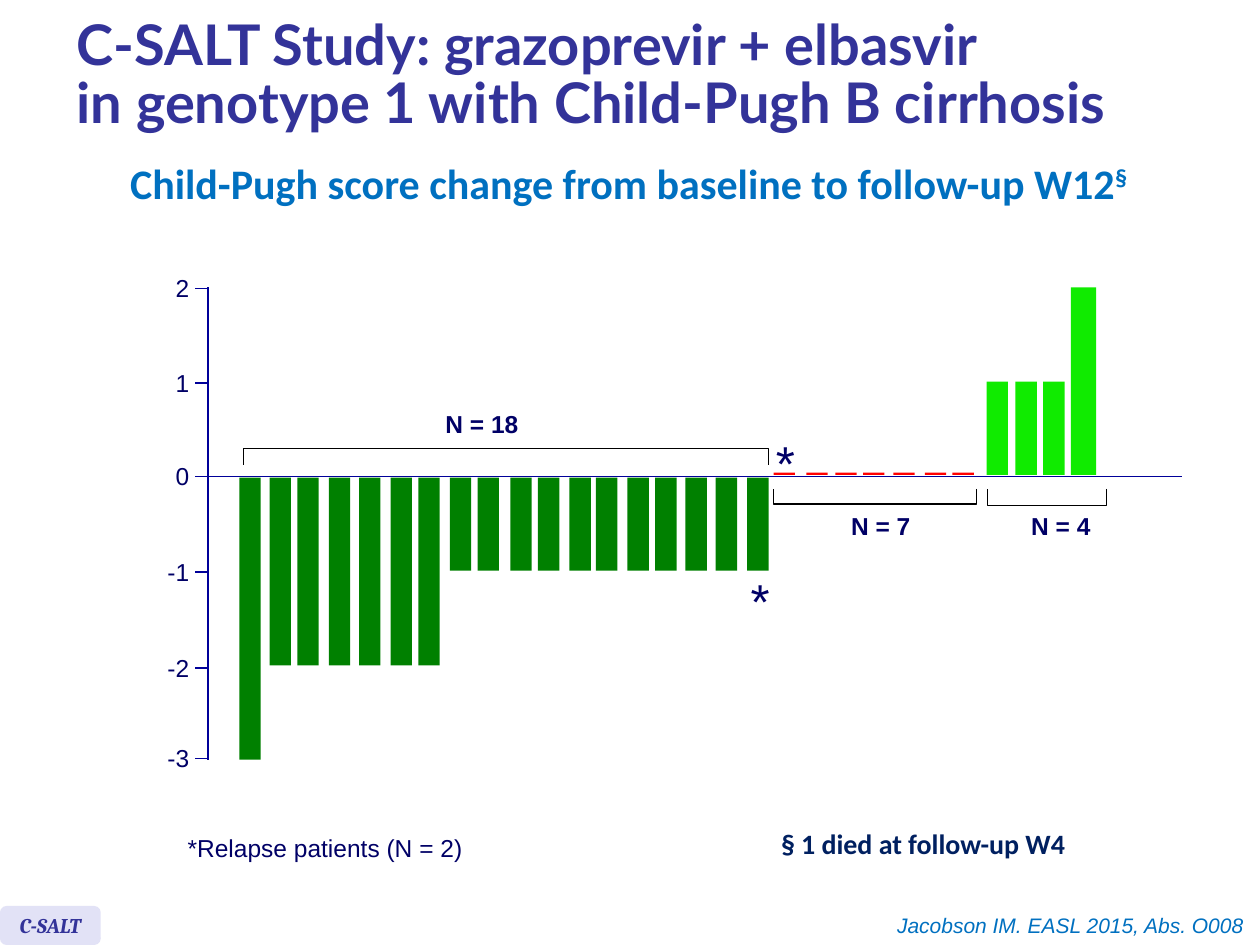
import dataclasses

import pptx
import pptx.dml.color
import pptx.enum.shapes
import pptx.enum.text
import pptx.oxml.ns
import pptx.util
from lxml import etree

SCALE = 9144
INK = {
    "axis": "000099", "label": "000066", "title": "333399", "head": "0070C0",
    "note": "002060", "drop": "008000", "rise": "10EB00", "same": "FF0000",
    "black": "000000", "badge": "E2E2F6",
}
SHAPE = pptx.enum.shapes.MSO_SHAPE
ALIGN = pptx.enum.text.PP_ALIGN
MIDDLE = pptx.enum.text.MSO_ANCHOR.MIDDLE
FIT = pptx.enum.text.MSO_AUTO_SIZE.SHAPE_TO_FIT_TEXT


@dataclasses.dataclass
class Box:
    x: int
    y: int
    w: int
    h: int


@dataclasses.dataclass
class Style:
    size: int
    face: str
    ink: str
    bold: bool = False
    slant: bool = False
    align: ALIGN = ALIGN.LEFT


@dataclasses.dataclass
class Label:
    text: str
    box: Box
    style: Style


@dataclasses.dataclass
class Brace:
    box: Box
    turn: int


@dataclasses.dataclass
class Group:
    lefts: list[int]
    score: int
    ink: str
    width: int = 17


def px(count: float) -> int:
    return round(count * SCALE)


def paint(name: str) -> pptx.dml.color.RGBColor:
    return pptx.dml.color.RGBColor.from_string(INK[name])


def add_run(para, text: str, style: Style):
    run = para.add_run()
    run.text = text
    font = run.font
    font.size = pptx.util.Pt(style.size)
    font.name = style.face
    font.bold = style.bold
    font.italic = style.slant
    font.color.rgb = paint(style.ink)
    return run


def add_text(slide, label: Label):
    box = label.box
    shape = slide.shapes.add_textbox(px(box.x), px(box.y), px(box.w), px(box.h))
    frame = shape.text_frame
    frame.word_wrap = False
    frame.auto_size = FIT
    para = frame.paragraphs[0]
    para.alignment = label.style.align
    add_run(para, label.text, label.style)
    return frame


def add_line(slide, x: int, y: int, end_x: int, end_y: int) -> None:
    line = slide.shapes.add_connector(
        pptx.enum.shapes.MSO_CONNECTOR.STRAIGHT, px(x), px(y), px(end_x), px(end_y))
    line.line.color.rgb = paint("axis")
    line.line.width = pptx.util.Pt(0.88)
    etree.SubElement(line._element.spPr, pptx.oxml.ns.qn("a:effectLst"))


def add_block(slide, kind: SHAPE, box: Box, ink: str):
    shape = slide.shapes.add_shape(kind, px(box.x), px(box.y), px(box.w), px(box.h))
    shape.shadow.inherit = False
    shape.fill.solid()
    shape.fill.fore_color.rgb = paint(ink)
    shape.line.fill.background()
    return shape


def add_brace(slide, brace: Brace) -> None:
    box = brace.box
    left = box.x + (box.w - box.h) / 2
    top = box.y + (box.h - box.w) / 2
    shape = slide.shapes.add_shape(
        SHAPE.LEFT_BRACKET, px(left), px(top), px(box.h), px(box.w))
    shape.shadow.inherit = False
    shape.adjustments[0] = 0
    shape.rotation = brace.turn
    shape.fill.background()
    shape.line.color.rgb = paint("black")
    shape.line.width = pptx.util.Pt(0.75)


def add_group(slide, group: Group) -> None:
    height = round(74.5 * abs(group.score)) or 2
    top = 379 if group.score < 0 else 377 - height
    for left in group.lefts:
        add_block(slide, SHAPE.RECTANGLE, Box(left, top, group.width, height), group.ink)


TICK = Style(14, "Arial", "label", align=ALIGN.RIGHT)
PLAIN = Style(14, "Arial", "label")
STAR = Style(28, "Arial", "label")
COUNT = Style(14, "Arial", "label", bold=True, align=ALIGN.CENTER)
TITLE = Style(32, "Lato", "title", bold=True)
HEAD = Style(24, "Calibri", "head", bold=True, align=ALIGN.CENTER)
NOTE = Style(16, "Calibri", "note", bold=True)
SOURCE = Style(12, "Arial", "head", slant=True, align=ALIGN.RIGHT)
BADGE = Style(12, "Cambria", "title", bold=True, slant=True)

TICKS = {2: 229, 1: 304, 0: 378, -1: 454, -2: 530, -3: 602}
GROUPS = [
    Group([190], -3, "drop"),
    Group([214, 236, 261, 285, 310, 332], -2, "drop"),
    Group([357, 379, 405, 427, 452, 473, 498, 520, 544, 568, 593], -1, "drop"),
    Group([614, 640, 663, 685, 709, 734, 756], 0, "same"),
    Group([783, 806, 828], 1, "rise"),
    Group([850], 2, "rise", 20),
]
BRACES = [
    Brace(Box(193, 356, 417, 13), 90),
    Brace(Box(614, 388, 161, 12), 270),
    Brace(Box(784, 388, 94, 13), 270),
]
LABELS = [
    Label("*Relapse patients (N = 2)", Box(139, 656, 240, 34), PLAIN),
    Label("*", Box(586, 448, 35, 57), STAR),
    Label("*", Box(606, 338, 35, 57), STAR),
    Label("N = 18", Box(335, 320, 95, 34), COUNT),
    Label("N = 7", Box(665, 401, 68, 34), COUNT),
    Label("N = 4", Box(808, 401, 68, 34), COUNT),
    Label("§ 1 died at follow-up W4", Box(610, 651, 249, 37), NOTE),
    Label("Jacobson IM. EASL 2015, Abs. O008", Box(695, 719, 302, 30), SOURCE),
]


def add_heads(slide) -> None:
    frame = add_text(slide, Label(
        "C-SALT Study: grazoprevir + elbasvir", Box(51, 8, 913, 107), TITLE))
    frame.word_wrap = True
    frame.auto_size = pptx.enum.text.MSO_AUTO_SIZE.NONE
    frame.vertical_anchor = MIDDLE
    para = frame.paragraphs[0]
    para.line_spacing = 0.85
    para.add_line_break()
    add_run(para, "in genotype 1 with Child-Pugh B cirrhosis", TITLE)

    frame = add_text(slide, Label(
        "Child-Pugh score change from baseline to follow-up W12",
        Box(79, 139, 840, 31), HEAD))
    para = frame.paragraphs[0]
    para.line_spacing = pptx.util.Pt(15.2)
    mark = add_run(para, "§", HEAD)
    mark._r.get_or_add_rPr().set("baseline", "30000")


def add_badge(slide) -> None:
    shape = add_block(slide, SHAPE.ROUNDED_RECTANGLE, Box(0, 719, 80, 31), "badge")
    frame = shape.text_frame
    frame.word_wrap = False
    frame.vertical_anchor = MIDDLE
    para = frame.paragraphs[0]
    para.alignment = ALIGN.CENTER
    add_run(para, "C-SALT", BADGE)


def main() -> None:
    deck = pptx.Presentation()
    deck.slide_width = px(1000)
    deck.slide_height = px(750)
    slide = deck.slides.add_slide(deck.slide_layouts[6])
    for score, y in TICKS.items():
        add_line(slide, 155, y, 165 if score else 938, y)
        width = 38 if score < 0 else 31
        add_text(slide, Label(str(score), Box(160 - width, y - 17, width, 34), TICK))
    for group in GROUPS:
        add_group(slide, group)
    add_line(slide, 165, 603, 165, 228)
    add_heads(slide)
    for brace in BRACES:
        add_brace(slide, brace)
    for label in LABELS:
        add_text(slide, label)
    add_badge(slide)
    deck.save("out.pptx")


if __name__ == "__main__":
    main()
